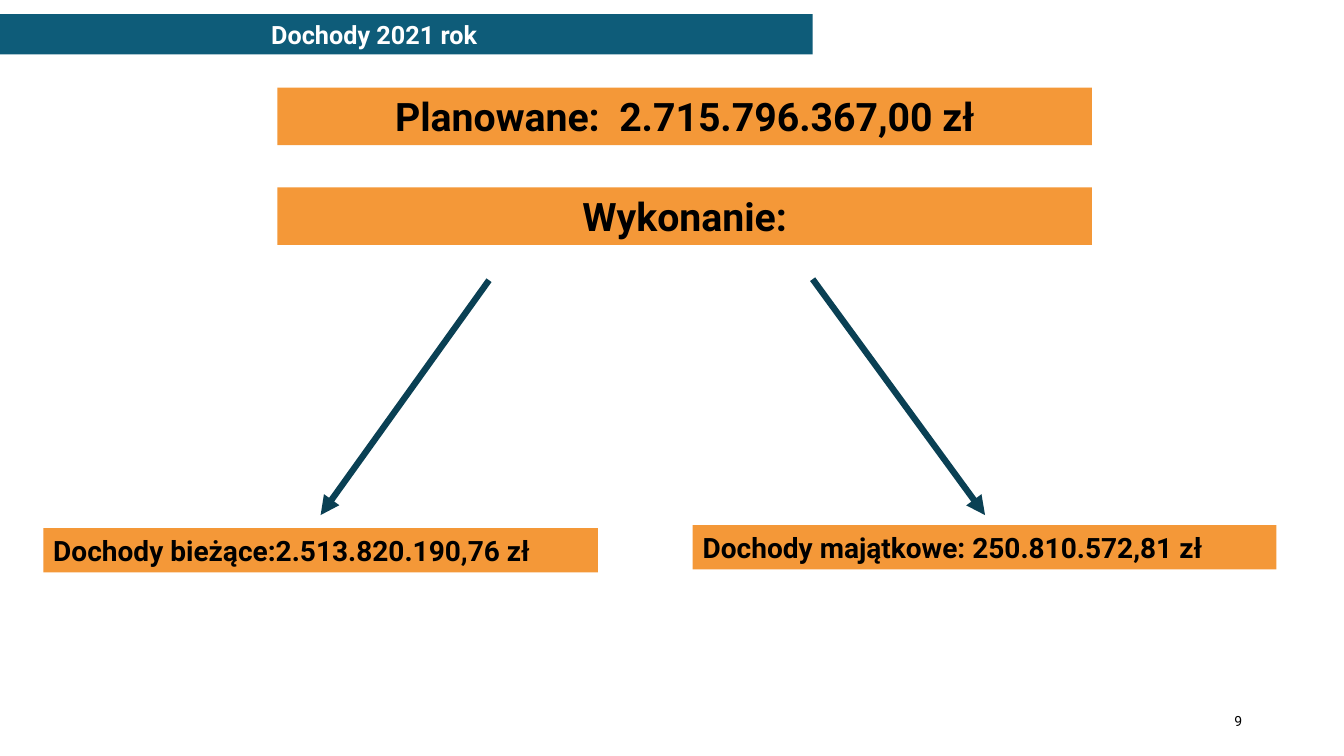
from pptx import Presentation
from pptx import util as u
from pptx.dml.color import RGBColor
from pptx.enum import shapes, text
from pptx.oxml.ns import qn
from lxml import etree

COLORS = {"teal": "0E5C79", "arrow": "0A4054", "orange": "F49838",
          "black": "000000", "white": "FFFFFF"}
LEFT, CENTER, RIGHT = text.PP_ALIGN.LEFT, text.PP_ALIGN.CENTER, text.PP_ALIGN.RIGHT


def rgb(name):
    return RGBColor.from_string(COLORS[name])


def write(sp, content, size, color, bold=True, align=LEFT, anchor=text.MSO_ANCHOR.TOP):
    tf = sp.text_frame
    tf.word_wrap = True
    tf.auto_size = text.MSO_AUTO_SIZE.NONE
    tf.vertical_anchor = anchor
    tf.margin_left = tf.margin_right = u.Inches(0.1)
    tf.margin_top = tf.margin_bottom = u.Inches(0.05)
    p = tf.paragraphs[0]
    p.alignment = align
    r = p.add_run()
    r.text = content
    r.font.name = "Roboto"
    r.font.size = u.Pt(size)
    r.font.bold = bold
    r.font.color.rgb = rgb(color)


prs = Presentation()
prs.slide_width, prs.slide_height = u.Inches(13.33), u.Inches(7.5)
s = prs.slides.add_slide(prs.slide_layouts[5])

# Title band, with the text set in from the left edge
title = s.shapes.title
title.left, title.top = u.Inches(-0.02), u.Inches(0.14)
title.width, title.height = u.Inches(8.08), u.Inches(0.4)
title.fill.solid()
title.fill.fore_color.rgb = rgb("teal")
write(title, "Dochody 2021 rok", 18, "white")
title.text_frame.margin_left = u.Inches(2.71)

# Arrows from the total down to its two parts
for x1, y1, x2, y2 in [(4.85, 2.78, 3.18, 5.11), (8.06, 2.77, 9.77, 5.11)]:
    arrow = s.shapes.add_connector(shapes.MSO_CONNECTOR.STRAIGHT, u.Inches(x1),
                                   u.Inches(y1), u.Inches(x2), u.Inches(y2))
    arrow.line.color.rgb = rgb("arrow")
    arrow.line.width = u.Pt(4.5)
    etree.SubElement(arrow.line._get_or_add_ln(), qn("a:tailEnd"), type="triangle")
    etree.SubElement(arrow._element.spPr, qn("a:effectLst"))

# Orange income bars
bars = [
    (2.75, 0.87, 8.08, 0.57, "Planowane:  2.715.796.367,00 zł", 28, CENTER),
    (2.75, 1.86, 8.08, 0.57, "Wykonanie:", 28, CENTER),
    (0.43, 5.24, 5.5, 0.44, "Dochody bieżące:2.513.820.190,76 zł", 20, LEFT),
    (6.87, 5.21, 5.79, 0.44, "Dochody majątkowe: 250.810.572,81 zł", 20, LEFT),
]
for x, y, w, h, content, size, align in bars:
    bar = s.shapes.add_shape(shapes.MSO_SHAPE.RECTANGLE, u.Inches(x), u.Inches(y),
                             u.Inches(w), u.Inches(h))
    bar.shadow.inherit = False
    bar.fill.solid()
    bar.fill.fore_color.rgb = rgb("orange")
    bar.line.fill.background()
    write(bar, content, size, "black", align=align)

# Slide number
number = s.shapes.add_textbox(u.Inches(9.42), u.Inches(6.95), u.Inches(3), u.Inches(0.4))
write(number, "9", 10, "black", bold=False, align=RIGHT, anchor=text.MSO_ANCHOR.MIDDLE)

prs.save("out.pptx")
